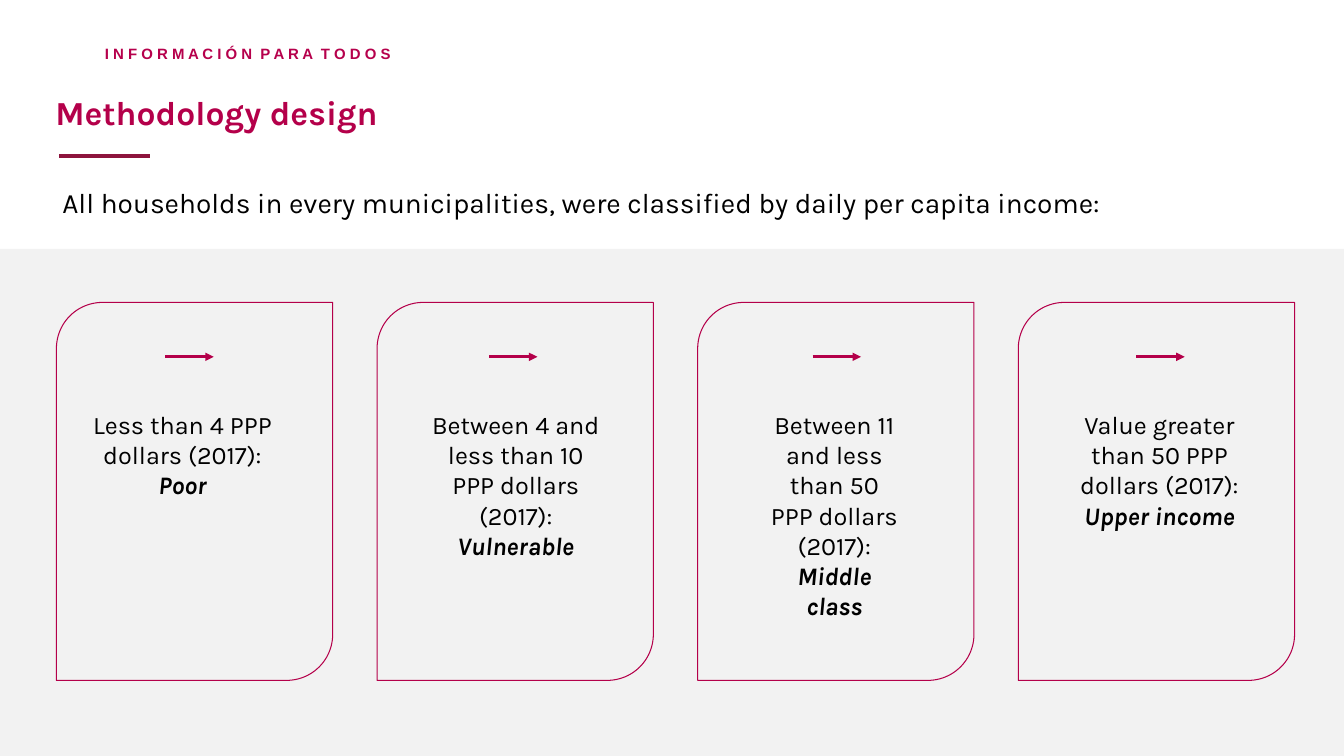
"""Build the methodology design slide with its four income classes."""
from lxml import etree
from pptx import Presentation
from pptx import util as u
from pptx.dml.color import RGBColor
from pptx.enum import shapes, text
from pptx.oxml import ns

BLACK = RGBColor(0x00, 0x00, 0x00)
CRIMSON = RGBColor(0xB4, 0x00, 0x4A)
KICKER_RED = RGBColor(0xB6, 0x00, 0x4C)
WINE = RGBColor(0x8D, 0x14, 0x3D)
PALE_GREY = RGBColor(0xF2, 0xF2, 0xF2)

PAGE_WIDTH, PAGE_HEIGHT = 13.33, 7.5
BAND_TOP = 2.47
CARD_LEFT, CARD_PITCH = 0.56, 3.18
CARD_TOP, CARD_WIDTH, CARD_HEIGHT = 3, 2.74, 3.75
ARROW_LEFT, ARROW_PITCH = 1.64, 3.21
ARROW_TOP, ARROW_LENGTH = 3.54, 0.48
LABEL_TOP = 4.01

INCOME_CLASSES = [
    ("Less than 4 PPP dollars (2017): ", "Poor", 0.19, 2.12, 1.01),
    ("Between 4 and less than 10 PPP dollars (2017): ", "Vulnerable", 0.38, 1.99, 1.62),
    ("Between 11 and less than 50 PPP dollars (2017): ", "Middle class", 0.62, 1.47, 2.22),
    ("Value greater than 50 PPP dollars (2017): ", "Upper income", 0.46, 1.88, 1.31),
]


def inches(*lengths):
    """Convert lengths in inches to slide units."""
    return [u.Inches(length) for length in lengths]


def style(span, size, color, bold=False, italic=False, font="Karla"):
    """Set the look of one run."""
    span.font.name = font
    span.font.size = u.Pt(size)
    span.font.color.rgb = color
    span.font.bold = bold
    span.font.italic = italic


def add_text(page, place, words, size, color, **look):
    """Add a wrapping text box with one styled run."""
    box = page.shapes.add_textbox(*inches(*place))
    box.text_frame.word_wrap = True
    box.text_frame.text = words
    style(box.text_frame.paragraphs[0].runs[0], size, color, **look)
    return box


def add_kicker(page):
    """Add the spaced-out line above the title."""
    box = add_text(page, (1.02, 0.37, 4.1, 0.23), "I N F O R M A C I Ó N  P A R A  T O D O S",
                   10.7, KICKER_RED, bold=True, font="Arial")
    frame = box.text_frame
    frame.margin_left = frame.margin_top = u.Inches(0.02)
    frame.margin_right = frame.margin_bottom = 0
    frame.paragraphs[0].alignment = text.PP_ALIGN.JUSTIFY
    frame.paragraphs[0].line_spacing = 1.3


def add_shape(page, kind, place, fill=None, line=None):
    """Add a flat preset shape with an optional fill and outline."""
    shape = page.shapes.add_shape(kind, *inches(*place))
    shape.shadow.inherit = False
    if fill is None:
        shape.fill.background()
    else:
        shape.fill.solid()
        shape.fill.fore_color.rgb = fill
    if line is None:
        shape.line.fill.background()
    else:
        shape.line.color.rgb = line
        shape.line.width = u.Pt(0.75)


def add_rule(page, left, top, length, color, width, arrow=False):
    """Add a horizontal line, with an arrowhead on request."""
    rule = page.shapes.add_connector(shapes.MSO_CONNECTOR.STRAIGHT,
                                     *inches(left, top, left + length, top))
    rule.line.color.rgb = color
    rule.line.width = u.Pt(width)
    if arrow:
        outline = rule.line._get_or_add_ln()
        etree.SubElement(outline, ns.qn("a:tailEnd"), type="triangle")
    etree.SubElement(rule._element.spPr, ns.qn("a:effectLst"))


def add_card(page, column, limits, name, inset, width, height):
    """Add one income class: card, label and arrow."""
    left = CARD_LEFT + column * CARD_PITCH
    add_shape(page, shapes.MSO_SHAPE.ROUND_2_DIAG_RECTANGLE,
              (left, CARD_TOP, CARD_WIDTH, CARD_HEIGHT), line=CRIMSON)
    label = add_text(page, (left + inset, LABEL_TOP, width, height), limits, 18, BLACK)
    para = label.text_frame.paragraphs[0]
    para.alignment = text.PP_ALIGN.CENTER
    span = para.add_run()
    span.text = name
    style(span, 18, BLACK, bold=True, italic=True)
    add_rule(page, ARROW_LEFT + column * ARROW_PITCH, ARROW_TOP, ARROW_LENGTH,
             CRIMSON, 2, arrow=True)


def main():
    """Compose the slide and save the deck."""
    deck = Presentation()
    deck.slide_width, deck.slide_height = inches(PAGE_WIDTH, PAGE_HEIGHT)
    page = deck.slides.add_slide(deck.slide_layouts[6])
    add_kicker(page)
    add_text(page, (0.45, 0.86, 11.7, 0.5), "Methodology design", 24, CRIMSON, bold=True)
    add_shape(page, shapes.MSO_SHAPE.RECTANGLE,
              (0, BAND_TOP, PAGE_WIDTH, PAGE_HEIGHT - BAND_TOP), fill=PALE_GREY)
    add_rule(page, 0.59, 1.55, 0.9, WINE, 3)
    add_text(page, (0.52, 1.79, 11.75, 2.12),
             "All households in every municipalities, were classified by daily per capita income:",
             20, BLACK)
    for column, income_class in enumerate(INCOME_CLASSES):
        add_card(page, column, *income_class)
    deck.save("out.pptx")


if __name__ == "__main__":
    main()
